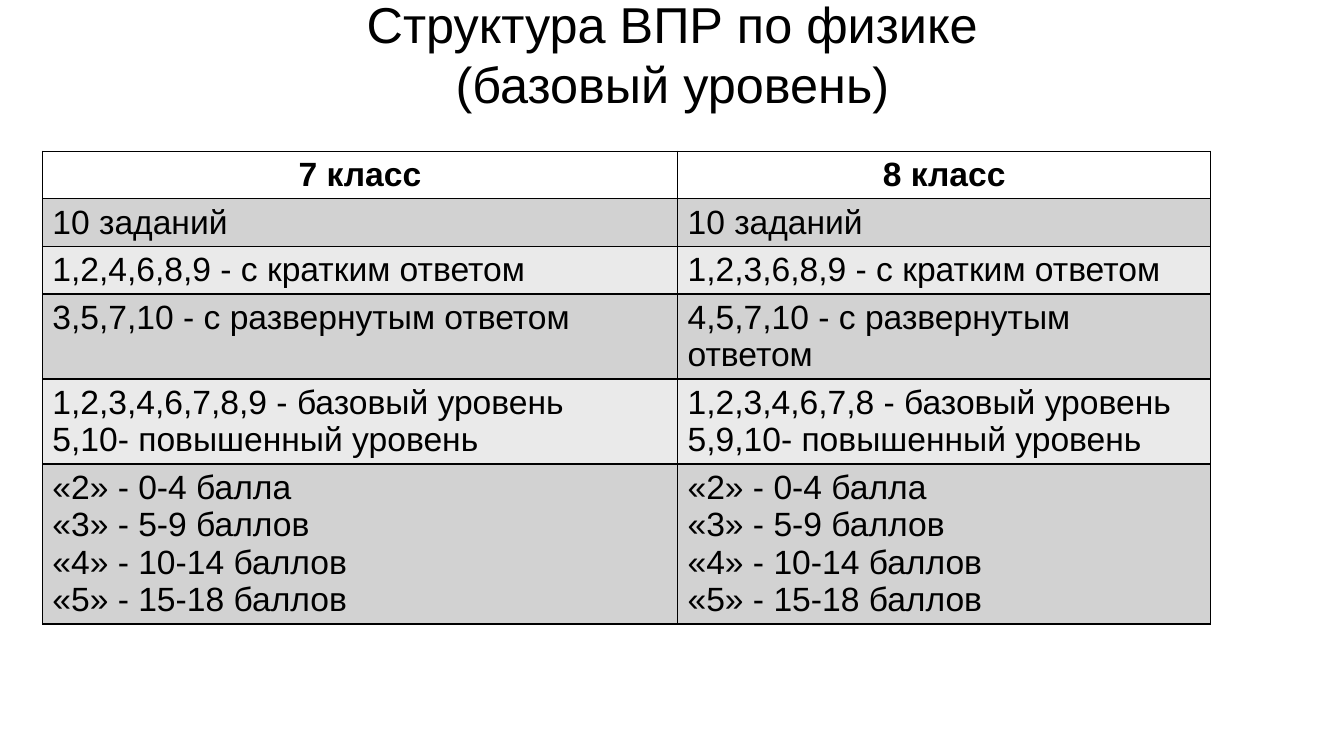
from lxml import etree
from pptx import Presentation
from pptx.dml.color import RGBColor
from pptx.enum.text import MSO_ANCHOR, MSO_AUTO_SIZE, PP_ALIGN
from pptx.oxml.ns import qn
from pptx.util import Inches, Pt

CENTER, LEFT = PP_ALIGN.CENTER, PP_ALIGN.LEFT
MIDDLE, NO_AUTOFIT = MSO_ANCHOR.MIDDLE, MSO_AUTO_SIZE.NONE

# Content
TITLE = "Структура ВПР по физике\v(базовый уровень)"
GRADES = "«2» - 0-4 балла\n«3» - 5-9 баллов\n«4» - 10-14 баллов\n«5» - 15-18 баллов"
ROWS = [
    ("7 класс", "8 класс"),
    ("10 заданий", "10 заданий"),
    ("1,2,4,6,8,9 - с кратким ответом", "1,2,3,6,8,9 - с кратким ответом"),
    ("3,5,7,10 - с развернутым ответом", "4,5,7,10 - с развернутым ответом"),
    ("1,2,3,4,6,7,8,9 - базовый уровень\n5,10- повышенный уровень",
     "1,2,3,4,6,7,8 - базовый уровень\n5,9,10- повышенный уровень"),
    (GRADES, GRADES),
]

# Layout and formats
SLIDE_WIDTH, SLIDE_HEIGHT = 13.33, 7.5
TITLE_BOX = (0.67, 0.21, 12, 0.64)
TABLE_LEFT, TABLE_TOP = 0.42, 1.5
COLUMN_WIDTHS = (6.3, 5.29)
ROW_HEIGHT = 0.42
HEADER_FILL, BAND_FILLS = "FFFFFF", ("D2D2D2", "EAEAEA")
BLACK = "000000"
TITLE_FORMAT = {"name": "Arial", "size": Pt(36), "bold": False}
HEADER_FORMAT = {"name": "Arial", "size": Pt(24), "bold": True}
BODY_FORMAT = {**HEADER_FORMAT, "bold": False}


def color(value):
    return RGBColor.from_string(value)


def format_text(text_frame, font_format, alignment):
    for paragraph in text_frame.paragraphs:
        paragraph.alignment = alignment
        for run in paragraph.runs:
            for name, value in font_format.items():
                setattr(run.font, name, value)
            run.font.color.rgb = color(BLACK)


def add_borders(cell):
    properties = cell._tc.get_or_add_tcPr()
    for index, side in enumerate(("lnL", "lnR", "lnT", "lnB")):
        line = etree.Element(qn(f"a:{side}"), w=str(Pt(1)))
        fill = etree.SubElement(line, qn("a:solidFill"))
        etree.SubElement(fill, qn("a:srgbClr"), val=BLACK)
        properties.insert(index, line)


presentation = Presentation()
presentation.slide_width = Inches(SLIDE_WIDTH)
presentation.slide_height = Inches(SLIDE_HEIGHT)
slide = presentation.slides.add_slide(presentation.slide_layouts[5])

# Title
title = slide.shapes.title
title.left, title.top, title.width, title.height = map(Inches, TITLE_BOX)
title_frame = title.text_frame
title_frame.text = TITLE
title_frame.auto_size = NO_AUTOFIT
title_frame.vertical_anchor = MIDDLE
format_text(title_frame, TITLE_FORMAT, CENTER)
for line_break in title_frame.paragraphs[0]._p.findall(qn("a:br")):
    etree.SubElement(line_break, qn("a:rPr"), sz=str(int(TITLE_FORMAT["size"].pt * 100)))

# Table
table = slide.shapes.add_table(
    len(ROWS), len(COLUMN_WIDTHS), Inches(TABLE_LEFT), Inches(TABLE_TOP),
    Inches(sum(COLUMN_WIDTHS)), Inches(ROW_HEIGHT * len(ROWS))).table
for column, width in zip(table.columns, COLUMN_WIDTHS):
    column.width = Inches(width)
for row_index, texts in enumerate(ROWS):
    is_header = row_index == 0
    fill = HEADER_FILL if is_header else BAND_FILLS[(row_index - 1) % 2]
    for column_index, text in enumerate(texts):
        cell = table.cell(row_index, column_index)
        cell.text = text
        cell.fill.solid()
        cell.fill.fore_color.rgb = color(fill)
        add_borders(cell)
        format_text(cell.text_frame, HEADER_FORMAT if is_header else BODY_FORMAT,
                    CENTER if is_header else LEFT)

presentation.save("out.pptx")
